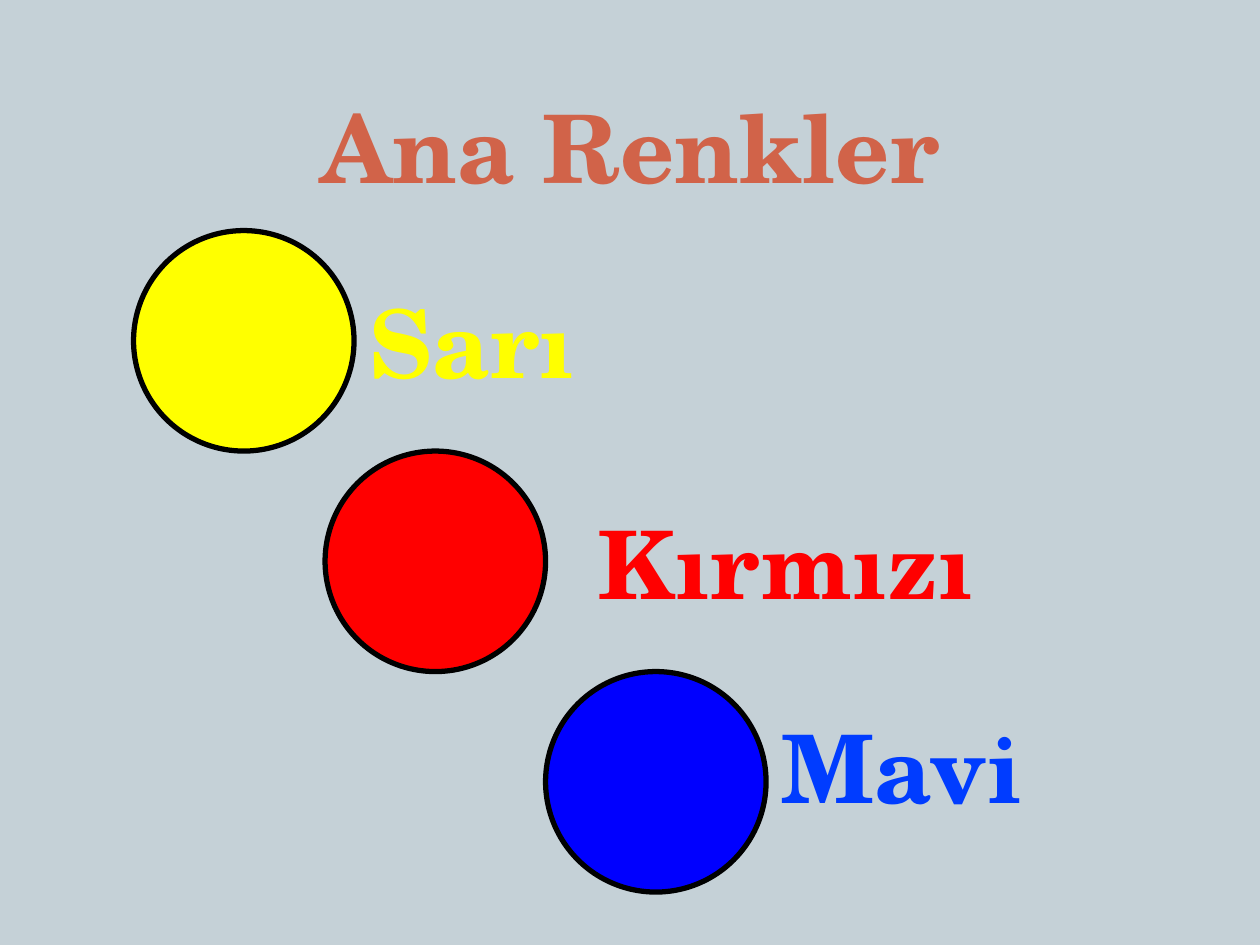
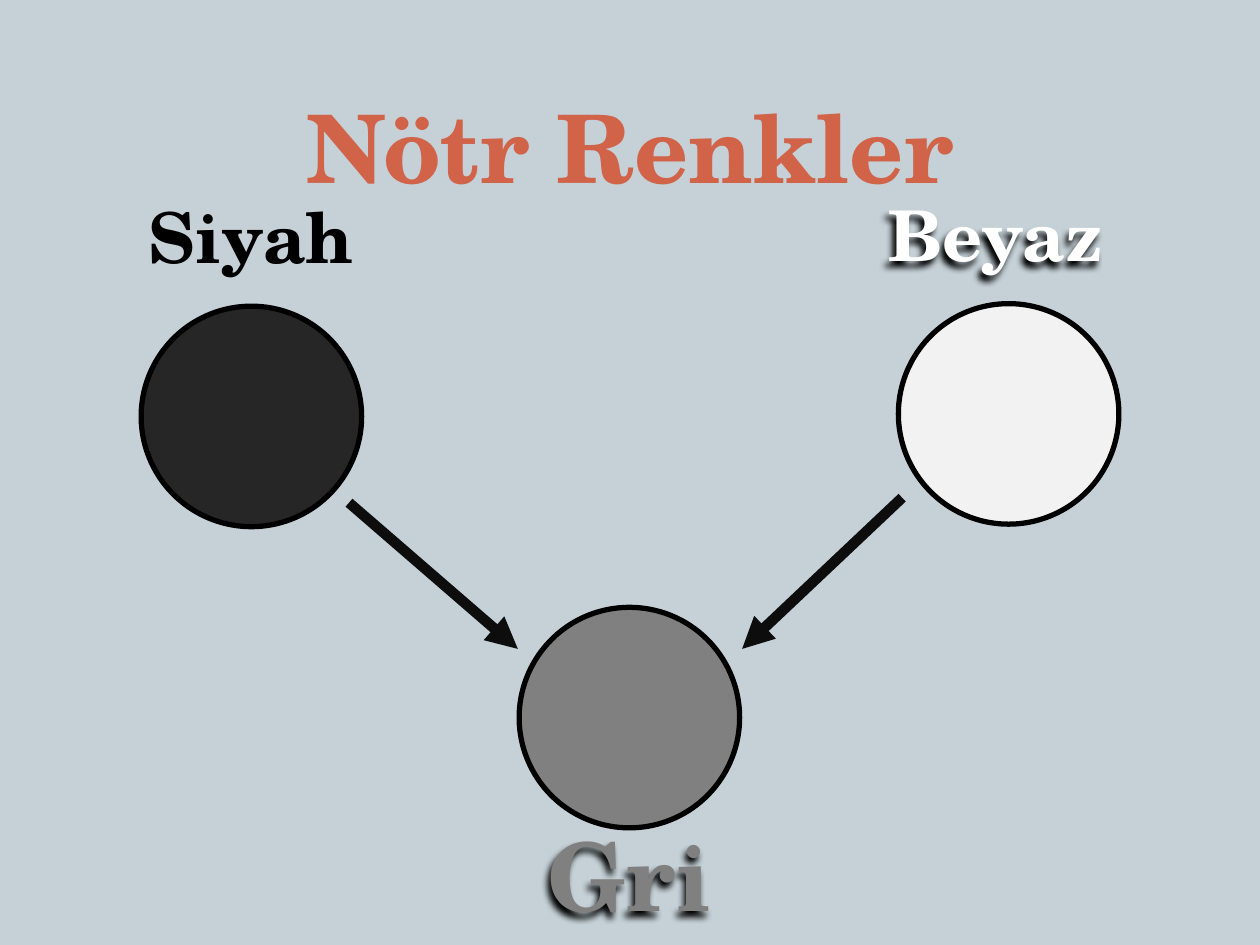
from lxml.etree import SubElement
from pptx import Presentation
from pptx.dml.color import RGBColor
from pptx.enum.shapes import MSO_CONNECTOR as Connector, MSO_SHAPE as Preset
from pptx.enum.text import MSO_ANCHOR as Anchor, MSO_AUTO_SIZE as AutoSize, PP_ALIGN as Align
from pptx.oxml.ns import qn
from pptx.util import Pt

EMU_PER_PX = 9144  # 100 px to the inch
TITLE_ONLY = 5
FONT = "TeX Gyre Schola"
COLOURS = {
    "background": "C5D1D7",
    "title": "D16349",
    "outline": "000000",
    "arrow": "0D0D0D",
    "yellow": "FFFF00",
    "red": "FF0000",
    "blue": "0000FF",
    "blue text": "003CFF",
    "black": "000000",
    "charcoal": "262626",
    "white": "FFFFFF",
    "off-white": "F2F2F2",
    "grey": "808080",
}


def px(*lengths):
    return [length * EMU_PER_PX for length in lengths]


def rgb(colour):
    return RGBColor.from_string(COLOURS[colour])


class ColourDeck:
    DIAMETER = 175

    def __init__(self):
        self.prs = Presentation()
        self.prs.slide_width, self.prs.slide_height = px(1000, 750)
        backdrop = self.prs.slide_master.background.fill
        backdrop.solid()
        backdrop.fore_color.rgb = rgb("background")
        self.slide = None

    def add_slide(self, title):
        self.slide = self.prs.slides.add_slide(self.prs.slide_layouts[TITLE_ONLY])
        heading = self.slide.shapes.title
        heading.left, heading.top, heading.width, heading.height = px(75, -7, 850, 173)
        self.set_text(heading.text_frame, title, "title", 54, Anchor.BOTTOM)

    def set_text(self, frame, text, colour, size, anchor=Anchor.MIDDLE, align=Align.CENTER):
        frame.text = text
        frame.word_wrap = True
        frame.auto_size = AutoSize.NONE
        frame.vertical_anchor = anchor
        paragraph = frame.paragraphs[0]
        paragraph.alignment = align
        font = paragraph.runs[0].font
        font.name, font.size, font.bold = FONT, Pt(size), True
        font.color.rgb = rgb(colour)

    def circle(self, left, top, colour):
        disc = self.slide.shapes.add_shape(
            Preset.OVAL, *px(left, top, self.DIAMETER, self.DIAMETER))
        disc.shadow.inherit = False
        disc.fill.solid()
        disc.fill.fore_color.rgb = rgb(colour)
        disc.line.color.rgb = rgb("outline")
        disc.line.width = Pt(3)

    def label(self, box, text, colour, size=54, align=Align.CENTER, shadow=False):
        name = self.slide.shapes.add_textbox(*px(*box))
        self.set_text(name.text_frame, text, colour, size, align=align)
        if shadow:
            self.drop_shadow(name)

    def drop_shadow(self, name):
        effects = SubElement(name.element.spPr, qn("a:effectLst"))
        outer = SubElement(effects, qn("a:outerShdw"), blurRad="50800",
                           dist="50000", dir="7500000", algn="tl")
        black = SubElement(outer, qn("a:srgbClr"), val=COLOURS["black"])
        SubElement(black, qn("a:alpha"), val="100000")

    def arrow(self, start, end):
        shaft = self.slide.shapes.add_connector(Connector.STRAIGHT, *px(*start, *end))
        shaft.line.color.rgb = rgb("arrow")
        shaft.line.width = Pt(6)
        SubElement(shaft.get_or_add_ln(), qn("a:tailEnd"), type="triangle")
        SubElement(shaft.element.spPr, qn("a:effectLst"))


def primary_colours(deck):
    deck.add_slide("Ana Renkler")
    deck.circle(433, 533, "blue")
    deck.circle(258, 358, "red")
    deck.circle(106, 183, "yellow")
    deck.label((427, 407, 394, 77), "Kırmızı", "red")
    deck.label((594, 572, 244, 72), "Mavi", "blue text")
    deck.label((281, 233, 187, 75), "Sarı", "yellow")


def neutral_colours(deck):
    deck.add_slide("Nötr Renkler")
    deck.circle(412, 482, "grey")
    deck.circle(713, 241, "off-white")
    deck.circle(112, 243, "charcoal")
    deck.label((695, 147, 210, 77), "Beyaz", "white", 40, Align.LEFT, shadow=True)
    deck.label((418, 657, 164, 72), "Gri", "grey", shadow=True)
    deck.label((106, 149, 187, 75), "Siyah", "black", 40)
    deck.arrow((277, 399), (411, 515))
    deck.arrow((716, 395), (589, 515))


def main():
    deck = ColourDeck()
    primary_colours(deck)
    neutral_colours(deck)
    deck.prs.save("out.pptx")


if __name__ == "__main__":
    main()
